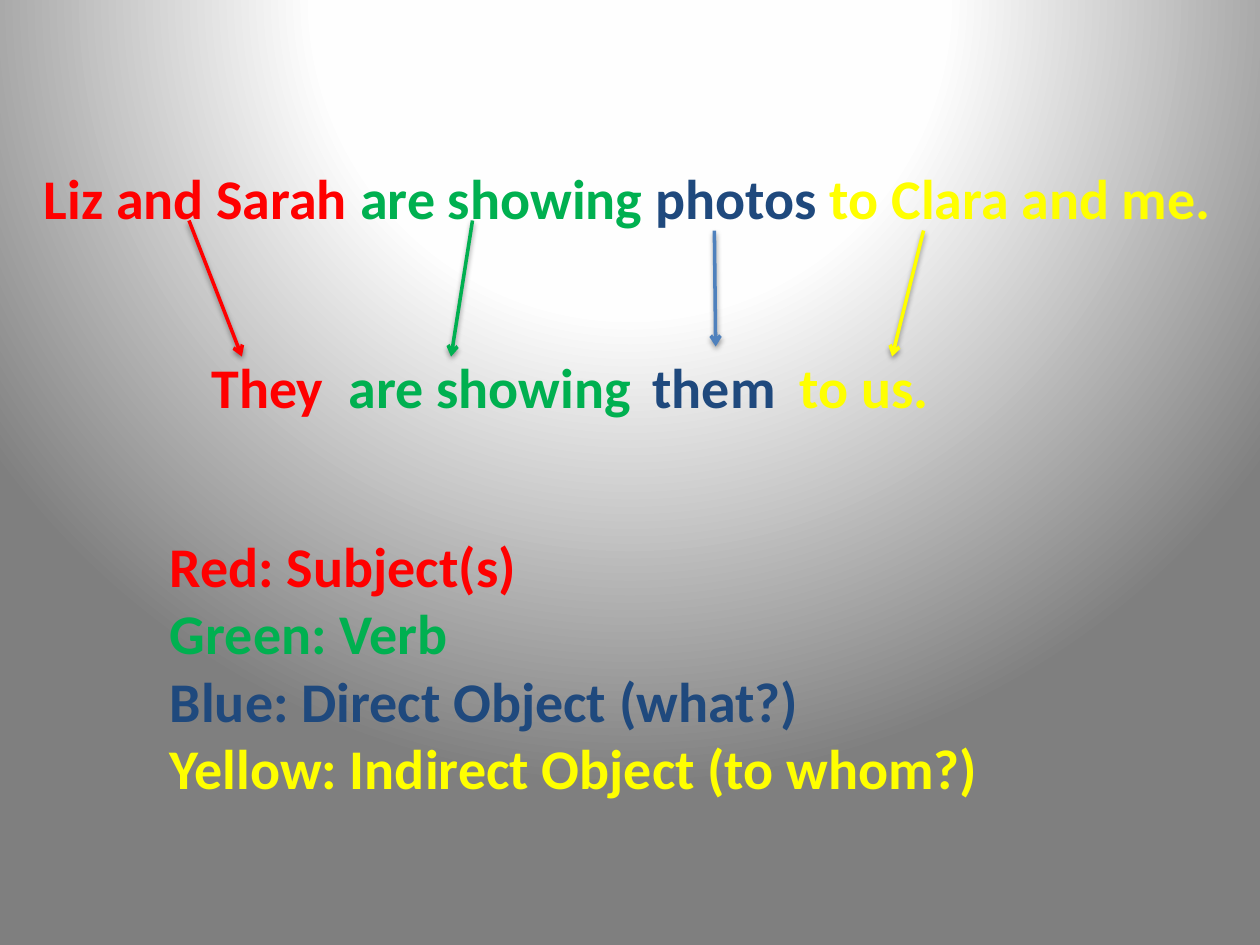
from lxml import etree
from pptx import Presentation
from pptx.dml.color import RGBColor
from pptx.enum.shapes import MSO_CONNECTOR
from pptx.oxml import parse_xml
from pptx.oxml.ns import nsdecls, qn
from pptx.util import Inches, Pt

STRAIGHT = MSO_CONNECTOR.STRAIGHT
RED, GREEN, NAVY, YELLOW, BLUE = "FF0000", "00B050", "1F497D", "FFFF00", "4F81BD"


def set_font(font, color):
    font.name, font.size, font.bold = "Calibri", Pt(32), True
    font.color.rgb = RGBColor.from_string(color)


def add_box(left, top, width, height, wrap=True):
    box = page.shapes.add_textbox(Inches(left), Inches(top), Inches(width), Inches(height))
    box.text_frame.word_wrap = wrap
    return box.text_frame


deck = Presentation()
deck.slide_width, deck.slide_height = Inches(10), Inches(7.5)
page = deck.slides.add_slide(deck.slide_layouts[6])

# Spotlight background, centred above the slide
stops = "".join(
    f'<a:gs pos="{share * 1000}"><a:srgbClr val="{color}"/></a:gs>'
    for share, color in [(0, "FFFFFF"), (40, "FEFEFE"), (100, "7F7F7F")])
page.background.fill.gradient()
old_fill = page.element.cSld.find(".//" + qn("a:gradFill"))
old_fill.getparent().replace(old_fill, parse_xml(
    f'<a:gradFill {nsdecls("a")} rotWithShape="1"><a:gsLst>{stops}</a:gsLst>'
    '<a:path path="circle"><a:fillToRect l="50000" t="-80000" r="50000" b="180000"/>'
    '</a:path></a:gradFill>'))

# Full sentence, one colour per part of speech
sentence = add_box(0.25, 1.25, 9.5, 0.64).paragraphs[0]
for words, color in [("Liz and Sarah ", RED), ("are showing ", GREEN),
                     ("photos ", NAVY), ("to Clara and me.", YELLOW)]:
    span = sentence.add_run()
    span.text = words
    set_font(span.font, color)

# Sentence with pronouns
for words, color, left, width in [("They", RED, 1.58, 1.1), ("are showing", GREEN, 2.67, 2.46),
                                  ("them", NAVY, 5.08, 1.19), ("to us.", YELLOW, 6.25, 1.24)]:
    para = add_box(left, 2.75, width, 0.64, wrap=False).paragraphs[0]
    para.text = words
    set_font(para.font, color)

# Arrows from each phrase to its replacement
for color, *ends in [(RED, 1.5, 1.75, 1.92, 2.83), (GREEN, 3.75, 1.75, 3.58, 2.83),
                     (BLUE, 5.67, 1.83, 5.68, 2.75), (YELLOW, 7.33, 1.83, 7.08, 2.83)]:
    arrow = page.shapes.add_connector(STRAIGHT, *map(Inches, ends))
    arrow.line.width = Pt(2)
    arrow.line.color.rgb = RGBColor.from_string(color)
    props = arrow.element.spPr
    etree.SubElement(props.find(qn("a:ln")), qn("a:tailEnd"), type="arrow")
    props.append(parse_xml(
        f'<a:effectLst {nsdecls("a")}><a:outerShdw blurRad="{Pt(3.1)}" dist="{Pt(1.6)}" '
        'dir="5400000" rotWithShape="0"><a:srgbClr val="000000"><a:alpha val="38000"/>'
        '</a:srgbClr></a:outerShdw></a:effectLst>'))

# Colour key
key = add_box(1.25, 4.17, 6.92, 2.26)
for index, (words, color) in enumerate([
        ("Red: Subject(s)", RED), ("Green: Verb", GREEN),
        ("Blue: Direct Object (what?)", NAVY), ("Yellow: Indirect Object (to whom?)", YELLOW)]):
    para = key.add_paragraph() if index else key.paragraphs[0]
    para.text = words
    set_font(para.font, color)

deck.save("out.pptx")
